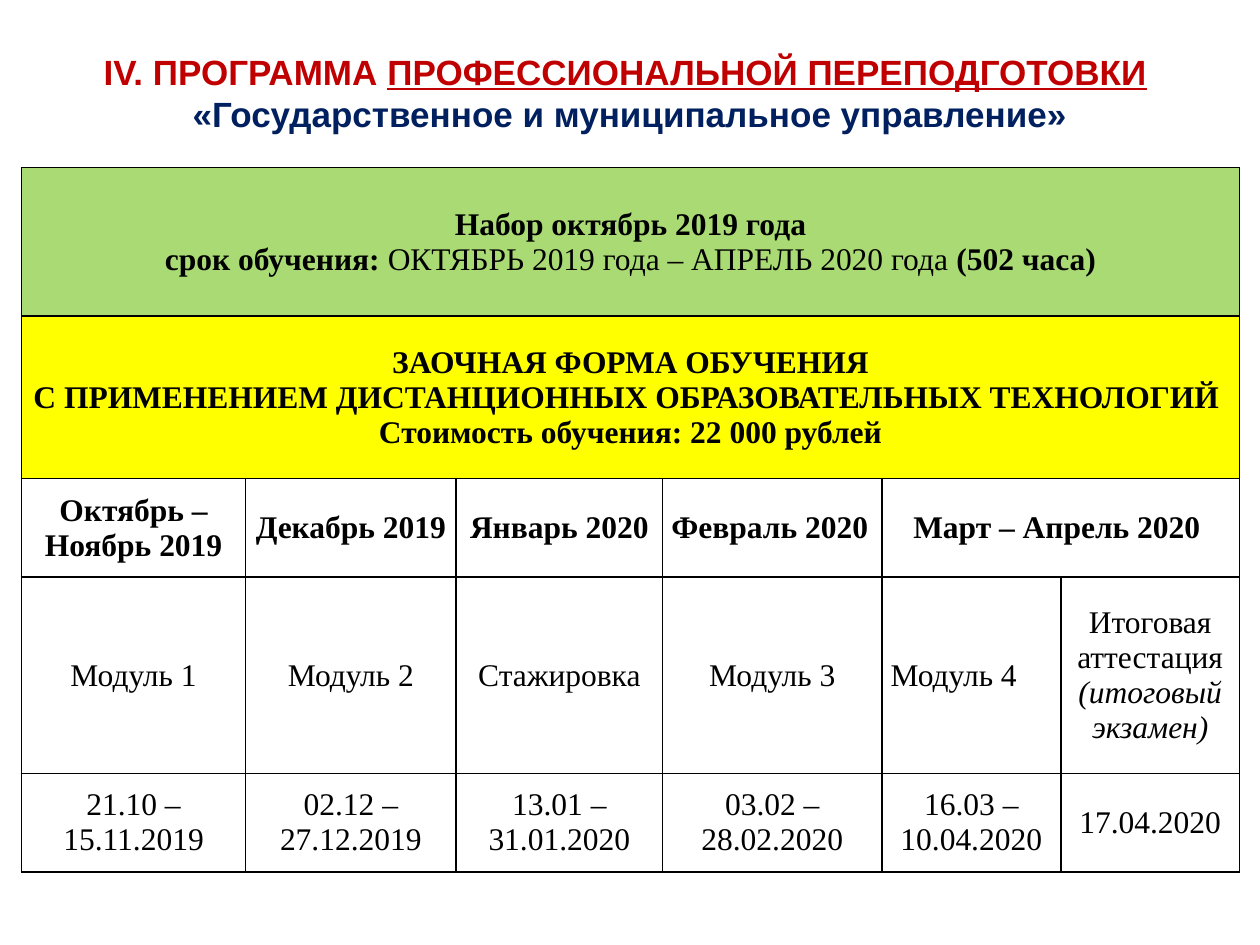
from dataclasses import dataclass

from lxml.etree import SubElement
from pptx import Presentation
from pptx.dml.color import RGBColor
from pptx.enum.text import MSO_ANCHOR, PP_ALIGN
from pptx.oxml.ns import qn
from pptx.util import Inches, Pt


@dataclass(frozen=True)
class Theme:
    red: RGBColor = RGBColor.from_string("C00000")
    navy: RGBColor = RGBColor.from_string("002060")
    black: RGBColor = RGBColor.from_string("000000")
    green: RGBColor = RGBColor.from_string("A9DA74")
    yellow: RGBColor = RGBColor.from_string("FFFF00")
    title_font: str = "Arial"
    table_font: str = "Times New Roman"
    title_size: Pt = Pt(20)
    table_size: Pt = Pt(18)
    border: Pt = Pt(1)


theme = Theme()


def style_font(font, name, size, color, bold):
    font.name = name
    font.size = size
    font.color.rgb = color
    font.bold = bold


def add_borders(cell):
    properties = cell._tc.get_or_add_tcPr()
    for position, side in enumerate(("a:lnL", "a:lnR", "a:lnT", "a:lnB")):
        line = properties.makeelement(qn(side), {"w": str(int(theme.border))})
        properties.insert(position, line)
        fill = SubElement(line, qn("a:solidFill"))
        SubElement(fill, qn("a:srgbClr"), val=str(theme.black))


presentation = Presentation()
presentation.slide_width = Inches(10)
presentation.slide_height = Inches(7.5)
slide = presentation.slides.add_slide(presentation.slide_layouts[6])

title = slide.shapes.add_textbox(Inches(0.5), Inches(0.3), Inches(9), Inches(0.87))
title_frame = title.text_frame
title_frame.word_wrap = True
title_frame.vertical_anchor = MSO_ANCHOR.MIDDLE
heading = title_frame.paragraphs[0]
heading.alignment = PP_ALIGN.CENTER
style_font(heading.font, theme.title_font, theme.title_size, theme.red, True)
heading.add_run().text = "IV. ПРОГРАММА "
underlined = heading.add_run()
underlined.text = "ПРОФЕССИОНАЛЬНОЙ ПЕРЕПОДГОТОВКИ"
underlined.font.underline = True
heading.add_run().text = " "
heading.add_line_break()
program_name = heading.add_run()
program_name.text = "«Государственное и муниципальное управление»"
program_name.font.color.rgb = theme.navy

column_widths = [1.78, 1.67, 1.64, 1.74, 1.42, 1.42]
row_heights = [1.18, 1.29, 0.78, 1.56, 0.78]
row_fills = [theme.green, theme.yellow, None, None, None]
bold_rows = {0, 1, 2}
left_aligned = {(2, 3), (3, 4)}
merges = [(0, 0, 5), (1, 0, 5), (2, 4, 5)]
rows = [
    [["Набор октябрь 2019 года",
      ("срок обучения: ", "ОКТЯБРЬ 2019 года – АПРЕЛЬ 2020 года", " (502 часа)")]],
    [["ЗАОЧНАЯ ФОРМА ОБУЧЕНИЯ",
      "С ПРИМЕНЕНИЕМ ДИСТАНЦИОННЫХ ОБРАЗОВАТЕЛЬНЫХ ТЕХНОЛОГИЙ ",
      "Стоимость обучения: 22 000 рублей"]],
    [["Октябрь – Ноябрь 2019"], ["Декабрь 2019"], ["Январь 2020"],
     ["Февраль 2020"], ["Март – Апрель 2020 "]],
    [["Модуль 1"], ["Модуль 2"], ["Стажировка"], ["Модуль 3"], ["Модуль 4"],
     ["Итоговая аттестация", "(итоговый экзамен)"]],
    [["21.10 – 15.11.2019"], ["02.12 – 27.12.2019"], ["13.01 – 31.01.2020"],
     ["03.02 – 28.02.2020"], ["16.03 – 10.04.2020"], ["17.04.2020"]],
]

table = slide.shapes.add_table(
    len(row_heights), len(column_widths), Inches(0.17), Inches(1.33),
    Inches(sum(column_widths)), Inches(sum(row_heights)),
).table
table.first_row = False
table.horz_banding = False
for column, width in zip(table.columns, column_widths):
    column.width = Inches(width)
for row, height in zip(table.rows, row_heights):
    row.height = Inches(height)
for row_index, first, last in merges:
    table.cell(row_index, first).merge(table.cell(row_index, last))

for row_index, fill_color in enumerate(row_fills):
    for column_index in range(len(column_widths)):
        cell = table.cell(row_index, column_index)
        if fill_color is None:
            cell.fill.background()
        else:
            cell.fill.solid()
            cell.fill.fore_color.rgb = fill_color
        add_borders(cell)

for row_index, row_texts in enumerate(rows):
    for column_index, lines in enumerate(row_texts):
        cell = table.cell(row_index, column_index)
        cell.vertical_anchor = MSO_ANCHOR.MIDDLE
        cell.margin_left = cell.margin_right = Inches(0.07)
        cell.margin_top = cell.margin_bottom = Inches(0)
        is_left = (row_index, column_index) in left_aligned
        for line_index, line in enumerate(lines):
            frame = cell.text_frame
            paragraph = frame.add_paragraph() if line_index else frame.paragraphs[0]
            paragraph.alignment = PP_ALIGN.LEFT if is_left else PP_ALIGN.CENTER
            style_font(paragraph.font, theme.table_font, theme.table_size,
                       theme.black, row_index in bold_rows)
            for text in [line] if isinstance(line, str) else line:
                paragraph.add_run().text = text

study_period = table.cell(0, 0).text_frame.paragraphs[1]
study_period.runs[1].font.bold = False
final_exam = table.cell(3, 5).text_frame.paragraphs[1]
final_exam.font.italic = True

presentation.save("out.pptx")
